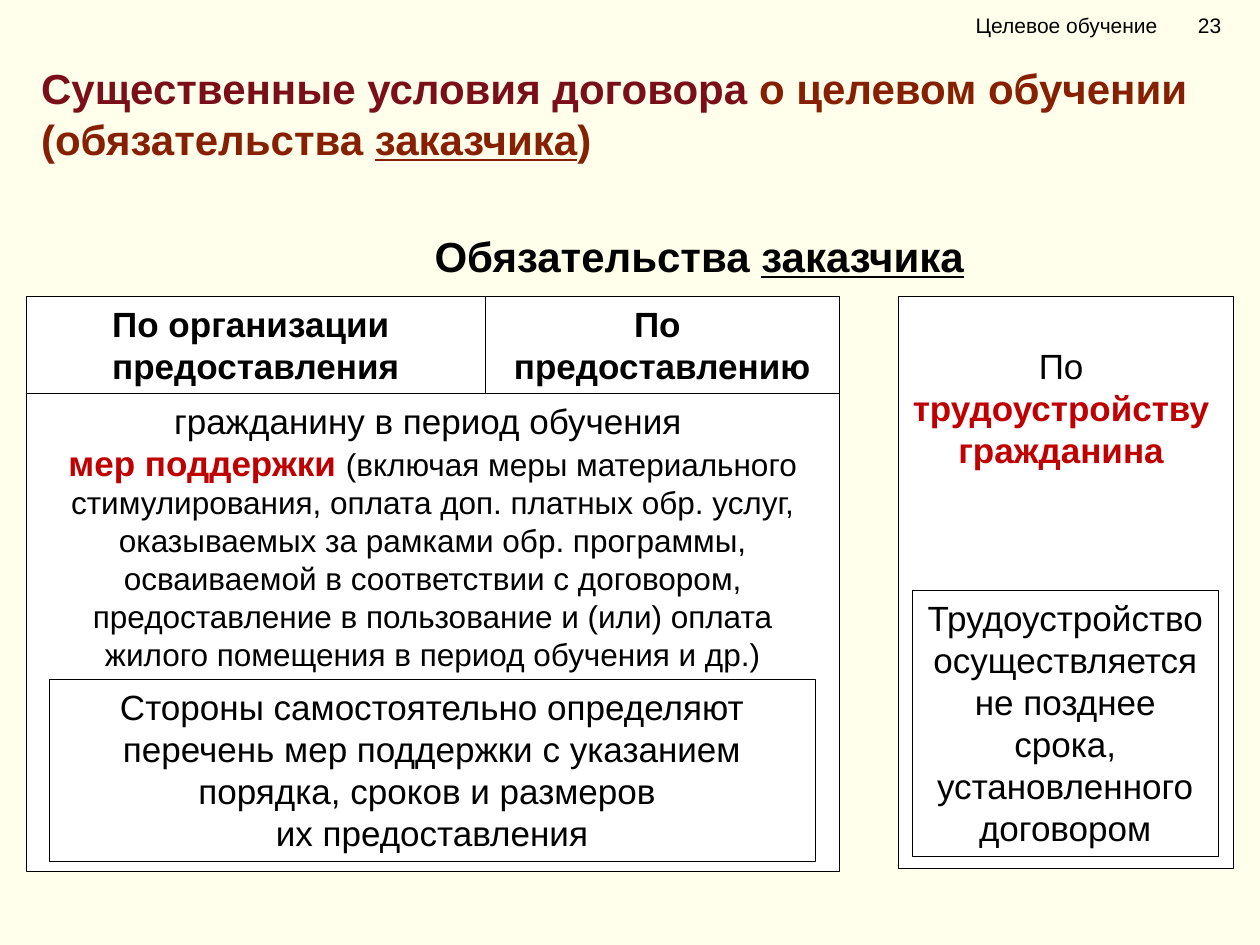
import dataclasses

import lxml.etree
import pptx
import pptx.dml.color
import pptx.enum.shapes
import pptx.enum.text
import pptx.oxml.ns
import pptx.util

Cm = pptx.util.Cm
Pt = pptx.util.Pt
ALIGN = pptx.enum.text.PP_ALIGN
ANCHOR = pptx.enum.text.MSO_ANCHOR


@dataclasses.dataclass(frozen=True)
class Theme:
    font: str = "Arial"
    paper: str = "FFFFEB"
    box: str = "FFFFFF"
    ink: str = "000000"
    accent: str = "C00000"
    title_dark: str = "7B0F19"
    title: str = "871F03"
    heading_size: int = 24
    body_size: int = 20
    detail_size: int = 18
    header_size: int = 12
    line_width: float = 0.25


def rgb(value):
    return pptx.dml.color.RGBColor.from_string(value)


class SlideBuilder:
    """Draws styled elements on the current slide."""

    def __init__(self, prs, theme):
        self.theme = theme
        self.s = prs.slides.add_slide(prs.slide_layouts[6])
        fill = self.s.background.fill
        fill.solid()
        fill.fore_color.rgb = rgb(theme.paper)

    def fill_text(self, tf, paragraphs, align, size, bold=False):
        tf.word_wrap = True
        for i, runs in enumerate(paragraphs):
            p = tf.add_paragraph() if i else tf.paragraphs[0]
            p.alignment = align
            for text, style in runs:
                r = p.add_run()
                r.text = text
                r.font.name = self.theme.font
                r.font.size = Pt(style.get("size", size))
                r.font.bold = style.get("bold", bold)
                r.font.underline = style.get("underline", False)
                r.font.color.rgb = rgb(style.get("color", self.theme.ink))

    def text(self, left, top, width, height, runs, size, bold=False):
        sp = self.s.shapes.add_textbox(Cm(left), Cm(top), Cm(width), Cm(height))
        self.fill_text(sp.text_frame, [runs], ALIGN.LEFT, size, bold)
        return sp

    def header(self, left, top, width, height, name, number, tab):
        runs = [(f"{name}\t{number}", {})]
        sp = self.text(left, top, width, height, runs, self.theme.header_size)
        tf = sp.text_frame
        tf.vertical_anchor = ANCHOR.MIDDLE
        tf.margin_left = Cm(0.77)
        ppr = tf.paragraphs[0]._p.get_or_add_pPr()
        tabs = lxml.etree.SubElement(ppr, pptx.oxml.ns.qn("a:tabLst"))
        lxml.etree.SubElement(
            tabs, pptx.oxml.ns.qn("a:tab"), pos=str(int(Cm(tab))), algn="l"
        )

    def box(self, left, top, width, height, paragraphs, bold=False, inset=0.13):
        sp = self.s.shapes.add_shape(
            pptx.enum.shapes.MSO_SHAPE.RECTANGLE,
            Cm(left), Cm(top), Cm(width), Cm(height),
        )
        sp.shadow.inherit = False
        sp.fill.solid()
        sp.fill.fore_color.rgb = rgb(self.theme.box)
        sp.line.color.rgb = rgb(self.theme.ink)
        sp.line.width = Pt(self.theme.line_width)
        tf = sp.text_frame
        tf.vertical_anchor = ANCHOR.TOP
        tf.margin_top = Cm(inset)
        self.fill_text(tf, paragraphs, ALIGN.CENTER, self.theme.body_size, bold)


def main():
    prs = pptx.Presentation()
    prs.slide_width, prs.slide_height = Cm(25.4), Cm(19.05)
    theme = Theme()
    s = SlideBuilder(prs, theme)
    accent = {"color": theme.accent, "bold": True}
    title = {"color": theme.title}
    left, top, row, split, right = 0.53, 5.97, 1.95, 9.78, 16.92

    s.text(0.58, 1.14, 24.43, 1.2, [
        ("Существенные условия договора ", {"color": theme.title_dark}),
        ("о целевом обучении (обязательства ", title),
        ("заказчика", {**title, "underline": True}),
        (")", title),
    ], theme.heading_size, bold=True)
    s.header(18.9, 0, 6.5, 1.02, "Целевое обучение", "23", tab=4.48)
    s.text(8.51, 4.52, 12.29, 1.27, [
        ("Обязательства ", {}),
        ("заказчика", {"underline": True}),
    ], theme.heading_size, bold=True)

    s.box(left, top + row, right - left, 9.65, [
        [("гражданину в период обучения ", {})],
        [("мер поддержки ", accent),
         ("(включая меры материального стимулирования, оплата доп. платных "
          "обр. услуг, оказываемых за рамками обр. программы, осваиваемой "
          "в соответствии с договором, предоставление в пользование и (или) "
          "оплата жилого помещения в период обучения и др.)",
          {"size": theme.detail_size})],
    ])
    s.box(left, top, split - left, row, [
        [("По организации ", {})],
        [("предоставления", {})],
    ], bold=True)
    s.box(split, top, right - split, row, [
        [("По ", {})],
        [("предоставлению", {})],
    ], bold=True)
    s.box(18.11, top, 6.76, 11.53, [
        [("По ", {})],
        [("трудоустройству ", accent)],
        [("гражданина ", accent)],
    ], inset=0.97)
    s.box(0.99, 13.69, 15.44, 3.68, [
        [("Стороны самостоятельно определяют перечень мер поддержки "
          "с указанием порядка, сроков и размеров ", {})],
        [("их предоставления", {})],
    ])
    s.box(18.4, 11.89, 6.15, 5.38, [
        [("Трудоустройство осуществляется", {})],
        [("не позднее срока, установленного договором", {})],
    ])
    prs.save("out.pptx")


if __name__ == "__main__":
    main()
